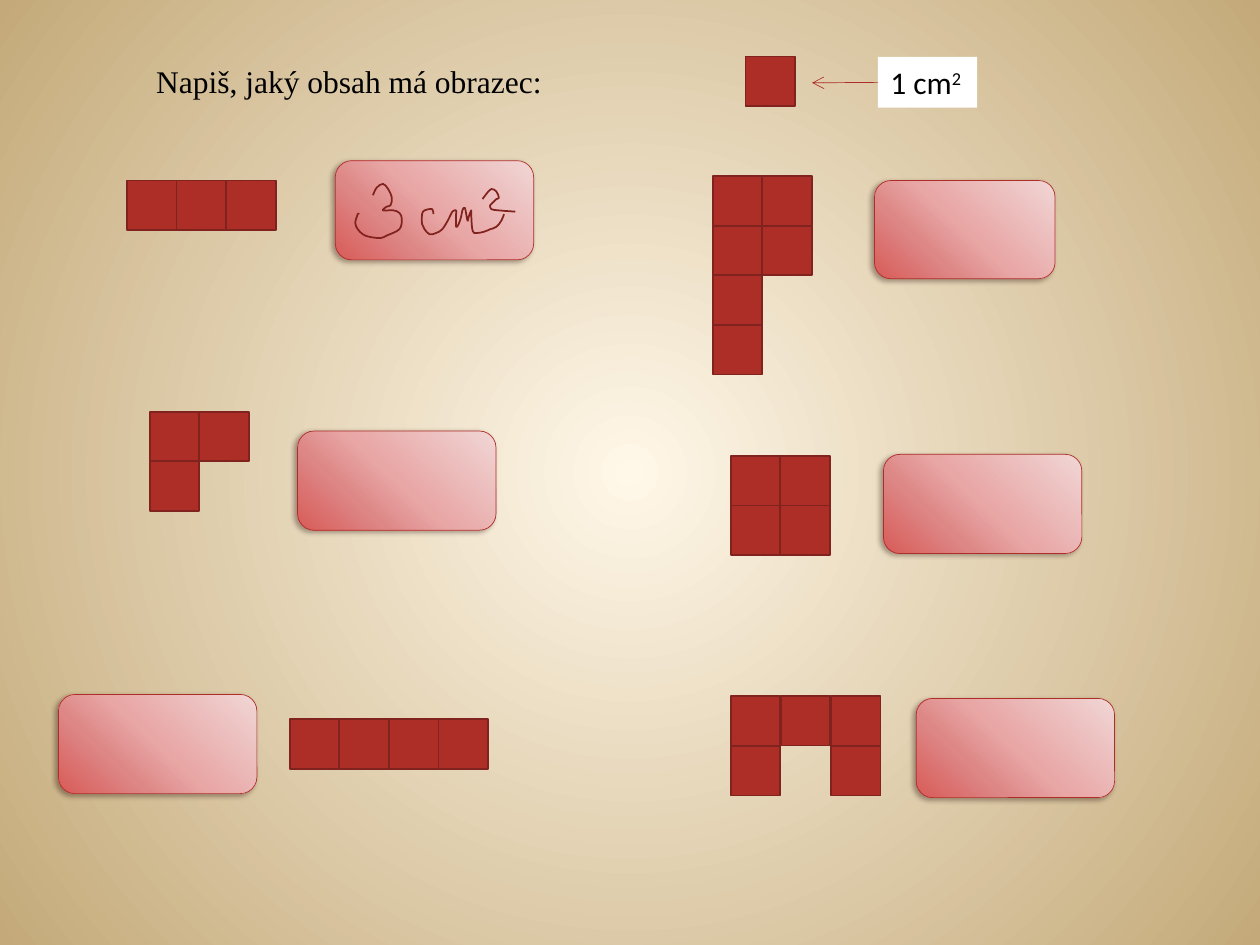
import dataclasses
import typing

import lxml.etree
import pptx
import pptx.dml.color
import pptx.enum.shapes
import pptx.enum.text
import pptx.oxml
import pptx.util

CELL = pptx.util.Cm(1)
STROKE_UNIT = pptx.util.Inches(0.01)
NAMESPACE = "http://schemas.openxmlformats.org/drawingml/2006/main"
DECLARATION = f'xmlns:a="{NAMESPACE}"'
RED = "AD2E27"
DARK_RED = "80221D"
PANEL_STOPS = ((0, "F0D6D5"), (50, "E8A6A5"), (70, "DD8887"), (100, "D85B58"))
PAGE_STOPS = ((0, "FFF7E8"), (100, "C4AA7A"))


@dataclasses.dataclass(frozen=True)
class Area:
    column: float
    row: float
    columns: float = 1
    rows: float = 1

    def lengths(self) -> typing.Tuple[int, ...]:
        return tuple(round(value * CELL) for value in dataclasses.astuple(self))


@dataclasses.dataclass(frozen=True)
class Exercise:
    column: float
    row: float
    pattern: str
    answer: Area
    pitch: float = 1


EXERCISES = (
    Exercise(2.56, 3.64, "###", Area(6.76, 3.24, 4, 2)),
    Exercise(3.02, 8.3, "## #", Area(6, 8.69, 4, 2)),
    Exercise(5.84, 14.5, "####", Area(1.18, 14, 4, 2)),
    Exercise(14.73, 14.03, "### #.#", Area(18.47, 14.08, 4, 2), 1.01),
    Exercise(14.73, 9.19, "## ##", Area(17.81, 9.16, 4, 2)),
    Exercise(14.37, 3.55, "## ## # #", Area(17.63, 3.64, 3.64, 1.98)),
)

HANDWRITING = (
    ((296, 155), (299, 149), (304, 146), (308, 150), (311, 157), (310, 163),
     (307, 164), (304, 167), (312, 167), (317, 169), (319, 174), (317, 182),
     (307, 187), (302, 189), (293, 188), (288, 186), (284, 182), (282, 177),
     (284, 170), (285, 170)),
    ((344, 170), (343, 166), (337, 167), (335, 170), (335, 178), (337, 182),
     (341, 186), (346, 185), (351, 182), (356, 174), (359, 168), (362, 167),
     (362, 170), (362, 180), (364, 178), (366, 172), (367, 167), (369, 165),
     (371, 175), (372, 172), (374, 167), (374, 170), (375, 183), (378, 185),
     (384, 184), (389, 182), (394, 180), (398, 175), (400, 170)),
    ((383, 158), (386, 154), (390, 150), (394, 152), (396, 157), (394, 158),
     (390, 162), (389, 163), (390, 166), (396, 167), (409, 168)),
)


def colour(value: str) -> pptx.dml.color.RGBColor:
    return pptx.dml.color.RGBColor.from_string(value)


def gradient(stops: typing.Sequence, direction: str) -> str:
    marks = "".join(
        f'<a:gs pos="{share * 1000}"><a:srgbClr val="{value}"/></a:gs>'
        for share, value in stops
    )
    return (f'<a:gradFill {DECLARATION} rotWithShape="1">'
            f"<a:gsLst>{marks}</a:gsLst>{direction}</a:gradFill>")


def set_line(shape: typing.Any, value: str, width: float) -> None:
    shape.line.color.rgb = colour(value)
    shape.line.width = pptx.util.Pt(width)


def paint_page(page: typing.Any) -> None:
    page.background.fill.gradient()
    current = page.element.find(f".//{{{NAMESPACE}}}gradFill")
    centre = ('<a:path path="circle"><a:fillToRect l="50000" t="50000" '
              'r="50000" b="50000"/></a:path>')
    current.getparent().replace(
        current, pptx.oxml.parse_xml(gradient(PAGE_STOPS, centre)))


def draw_square(page: typing.Any, area: Area) -> None:
    box = page.shapes.add_shape(
        pptx.enum.shapes.MSO_SHAPE.RECTANGLE, *area.lengths())
    box.shadow.inherit = False
    box.fill.solid()
    box.fill.fore_color.rgb = colour(RED)
    set_line(box, DARK_RED, 1)


def draw_answer(page: typing.Any, area: Area) -> None:
    box = page.shapes.add_shape(
        pptx.enum.shapes.MSO_SHAPE.ROUNDED_RECTANGLE, *area.lengths())
    box.shadow.inherit = False
    box.fill.gradient()
    set_line(box, RED, 0.39)
    properties = box.element.spPr
    current = properties.find(f"{{{NAMESPACE}}}gradFill")
    slope = '<a:lin ang="7980000" scaled="0"/>'
    properties.replace(
        current, pptx.oxml.parse_xml(gradient(PANEL_STOPS, slope)))
    effects = properties.find(f"{{{NAMESPACE}}}effectLst")
    effects.append(pptx.oxml.parse_xml(
        f'<a:outerShdw {DECLARATION} blurRad="{pptx.util.Pt(3.1)}" '
        f'dist="{pptx.util.Pt(2)}" dir="9000000" rotWithShape="0">'
        '<a:srgbClr val="1A0000"><a:alpha val="35000"/></a:srgbClr>'
        "</a:outerShdw>"))


def draw_exercise(page: typing.Any, exercise: Exercise) -> None:
    for row, marks in enumerate(exercise.pattern.split()):
        for column, mark in enumerate(marks):
            if mark == "#":
                draw_square(page, Area(
                    exercise.column + column * exercise.pitch,
                    exercise.row + row * exercise.pitch))
    draw_answer(page, exercise.answer)


def write_text(page: typing.Any, area: Area, text: str, font: str,
               power: str = "") -> typing.Any:
    box = page.shapes.add_textbox(*area.lengths())
    frame = box.text_frame
    frame.text = text
    frame.word_wrap = True
    frame.auto_size = pptx.enum.text.MSO_AUTO_SIZE.SHAPE_TO_FIT_TEXT
    para = frame.paragraphs[0]
    if power:
        raised = para.add_run()
        raised.text = power
        raised.font._element.set("baseline", "30000")
    for span in para.runs:
        span.font.name = font
        span.font.size = pptx.util.Pt(18)
        span.font.color.rgb = colour("000000")
    return box


def draw_unit(page: typing.Any) -> None:
    draw_square(page, Area(15.03, 1.14))
    arrow = page.shapes.add_connector(
        pptx.enum.shapes.MSO_CONNECTOR.STRAIGHT,
        *Area(17.78, 1.66, 16.37, 1.67).lengths())
    set_line(arrow, RED, 0.39)
    lxml.etree.SubElement(
        arrow.line._get_or_add_ln(), f"{{{NAMESPACE}}}tailEnd", type="arrow")
    lxml.etree.SubElement(arrow.element.spPr, f"{{{NAMESPACE}}}effectLst")
    label = write_text(page, Area(17.7, 1.15, 2, 1.02), "1 cm", "Calibri", "2")
    label.fill.solid()
    label.fill.fore_color.rgb = colour("FFFFFF")


def round_corners(stroke: typing.Any) -> None:
    marks = stroke.element.findall(f".//{{{NAMESPACE}}}pt")
    points = [(int(mark.get("x")), int(mark.get("y"))) for mark in marks]
    padded = (points[0], *points, points[-1])
    for mark, before, start, end, after in zip(
            marks[1:], padded, padded[1:], padded[2:], padded[3:]):
        leave = [b + (c - a) / 6 for a, b, c in zip(before, start, end)]
        arrive = [c - (d - b) / 6 for b, c, d in zip(start, end, after)]
        stops = "".join(f'<a:pt x="{round(x)}" y="{round(y)}"/>'
                        for x, y in (leave, arrive, end))
        segment = mark.getparent()
        segment.getparent().replace(segment, pptx.oxml.parse_xml(
            f"<a:cubicBezTo {DECLARATION}>{stops}</a:cubicBezTo>"))


def draw_stroke(page: typing.Any, points: typing.Sequence) -> None:
    places = [(x * STROKE_UNIT, y * STROKE_UNIT) for x, y in points]
    builder = page.shapes.build_freeform(*places[0])
    builder.add_line_segments(places[1:], close=False)
    stroke = builder.convert_to_shape()
    round_corners(stroke)
    stroke.shadow.inherit = False
    stroke.fill.background()
    set_line(stroke, DARK_RED, 1)


def main() -> None:
    deck = pptx.Presentation()
    deck.slide_width = pptx.util.Inches(10)
    deck.slide_height = pptx.util.Inches(7.5)
    page = deck.slides.add_slide(deck.slide_layouts[6])
    paint_page(page)
    write_text(page, Area(2.9, 1.12, 8.99, 1.02),
               "Napiš, jaký obsah má obrazec:", "Times New Roman")
    draw_unit(page)
    for exercise in EXERCISES:
        draw_exercise(page, exercise)
    for points in HANDWRITING:
        draw_stroke(page, points)
    deck.save("out.pptx")


if __name__ == "__main__":
    main()
